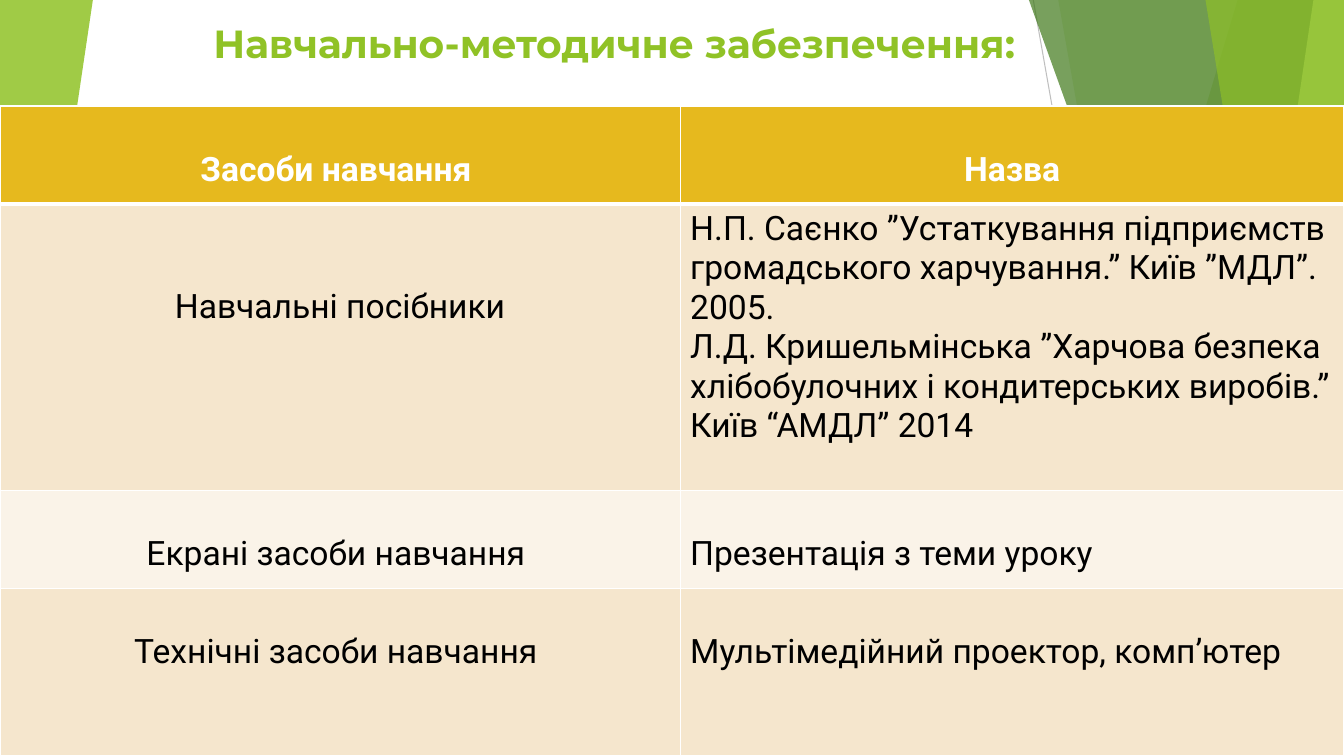
"""Build a slide with a table of teaching and methodical materials."""
import dataclasses

import pptx
import pptx.dml.color
import pptx.enum.shapes
import pptx.enum.text
import pptx.oxml
import pptx.oxml.ns
import pptx.util
from lxml import etree

Cm, Pt = pptx.util.Cm, pptx.util.Pt
RGB = pptx.dml.color.RGBColor.from_string
qn = pptx.oxml.ns.qn
ALIGN = pptx.enum.text.PP_ALIGN


@dataclasses.dataclass(frozen=True)
class Theme:
    green: str = "90C226"
    dark_green: str = "3F7819"
    pale_green: str = "C0E474"
    grey: str = "BFBFBF"
    gold: str = "E6B91E"
    sand: str = "F5E6CD"
    cream: str = "FAF3E8"
    white: str = "FFFFFF"
    black: str = "000000"
    title_font: str = "Montserrat"
    body_font: str = "Roboto"
    title_size: float = 28
    body_size: float = 24


def fill_translucent(sp, color, alpha):
    """Give a shape a see-through fill without outline or shadow."""
    sp.shadow.inherit = False
    sp.fill.solid()
    sp.fill.fore_color.rgb = RGB(color)
    clr = sp.element.find(".//" + qn("a:srgbClr"))
    etree.SubElement(clr, qn("a:alpha"), val=str(alpha * 1000))
    sp.line.fill.background()


def add_run(p, text, font, size, color, bold):
    """Add one formatted run to a paragraph."""
    r = p.add_run()
    r.text = text
    r.font.name = font
    r.font.size = Pt(size)
    r.font.color.rgb = RGB(color)
    r.font.bold = bold


theme = Theme()
width, height = 33.87, 19.05
prs = pptx.Presentation()
prs.slide_width, prs.slide_height = Cm(width), Cm(height)
s = prs.slides.add_slide(prs.slide_layouts[6])

line = s.shapes.add_connector(
    pptx.enum.shapes.MSO_CONNECTOR.STRAIGHT, Cm(26.04), 0, Cm(29.41), Cm(height))
line.line.color.rgb = RGB(theme.grey)
line.line.width = Pt(0.75)
etree.SubElement(line.element.spPr, qn("a:effectLst"))

facets = [
    (31.19, 25.5, theme.green, 30),
    (26.67, 30.05, theme.green, 20),
    (25.93, 32.79, theme.dark_green, 70),
    (33.1, 30.28, theme.pale_green, 70),
    (30.38, 33.48, theme.green, 65),
]
for top_x, bottom_x, color, alpha in facets:
    fb = s.shapes.build_freeform(Cm(top_x), 0)
    fb.add_line_segments(
        [(Cm(width), 0), (Cm(width), Cm(height)), (Cm(bottom_x), Cm(height))], close=True)
    fill_translucent(fb.convert_to_shape(), color, alpha)

wedge = s.shapes.add_shape(
    pptx.enum.shapes.MSO_SHAPE.ISOSCELES_TRIANGLE, 0, 0, Cm(2.34), Cm(15.75))
wedge.adjustments[0] = 1
wedge.rotation = 180
fill_translucent(wedge, theme.green, 85)

title = s.shapes.add_textbox(Cm(1.58), Cm(0.48), Cm(24), Cm(1.2))
tf = title.text_frame
tf.word_wrap = True
tf.margin_left = tf.margin_right = tf.margin_top = tf.margin_bottom = 0
p = tf.paragraphs[0]
p.alignment = ALIGN.RIGHT
add_run(p, "Навчально-методичне забезпечення:",
        theme.title_font, theme.title_size, theme.green, True)

no_gap, one_line, two_lines = 0.13, 1.12, 2.11
rows = [
    (2.47, theme.gold,
     [(one_line, ["Засоби навчання "]), (one_line, ["Назва"])]),
    (7.21, theme.sand,
     [(two_lines, ["Навчальні посібники"]),
      (no_gap, ["Н.П. Саєнко ”Устаткування підприємств громадського харчування.” "
                "Київ ”МДЛ”. 2005.",
                "Л.Д. Кришельмінська ”Харчова безпека хлібобулочних і "
                "кондитерських виробів.” Київ “АМДЛ” 2014"])]),
    (2.47, theme.cream,
     [(one_line, ["Екрані засоби навчання "]), (one_line, ["Презентація з теми уроку"])]),
    (4.22, theme.sand,
     [(one_line, ["Технічні засоби навчання "]),
      (one_line, ["Мультімедійний проектор, комп’ютер"])]),
]
columns = [17.14, 16.73]
table = s.shapes.add_table(
    len(rows), len(columns), 0, Cm(2.67), Cm(width), Cm(sum(row[0] for row in rows))).table
for i, column_width in enumerate(columns):
    table.columns[i].width = Cm(column_width)

for i, (row_height, fill, cells) in enumerate(rows):
    table.rows[i].height = Cm(row_height)
    header = i == 0
    for j, (top_margin, paragraphs) in enumerate(cells):
        cell = table.cell(i, j)
        cell.margin_top = Cm(top_margin)
        tcPr = cell._tc.get_or_add_tcPr()
        for side in "LRTB":
            heavy = (header and side == "B") or (i == 1 and side == "T")
            ln = etree.SubElement(tcPr, qn("a:ln" + side), w=str(Pt(3 if heavy else 1)))
            solid = etree.SubElement(ln, qn("a:solidFill"))
            etree.SubElement(solid, qn("a:srgbClr"), val=theme.white)
        cell.fill.solid()
        cell.fill.fore_color.rgb = RGB(fill)
        tf = cell.text_frame
        for k, text in enumerate(paragraphs):
            p = tf.add_paragraph() if k else tf.paragraphs[0]
            p.alignment = ALIGN.CENTER if header or j == 0 else ALIGN.LEFT
            add_run(p, text, theme.body_font, theme.body_size,
                    theme.white if header else theme.black, header)

prs.save("out.pptx")
